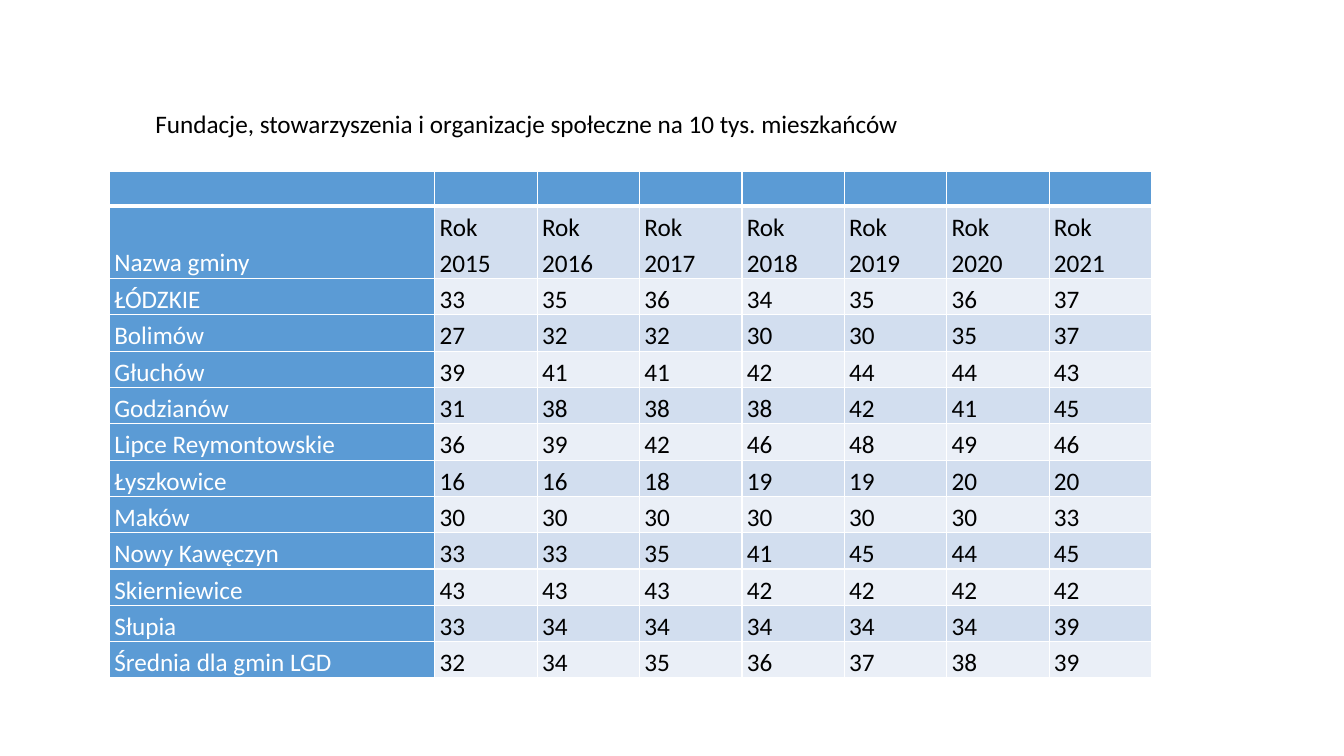
from dataclasses import dataclass

from lxml.etree import SubElement
from pptx import Presentation
from pptx.dml.color import RGBColor
from pptx.enum.text import MSO_ANCHOR, MSO_AUTO_SIZE, PP_ALIGN
from pptx.oxml.ns import qn
from pptx.util import Cm, Pt

BLUE, WHITE, BLACK = "5B9BD5", "FFFFFF", "000000"
BANDS = ("D2DEEF", "EAEFF7")
YEARS = range(2015, 2022)
CELL = {"margin_left": Cm(0.12), "margin_right": Cm(0.12), "margin_top": 0,
        "margin_bottom": 0, "vertical_anchor": MSO_ANCHOR.BOTTOM}
PARA = {"alignment": PP_ALIGN.JUSTIFY, "line_spacing": 1.2,
        "space_before": Pt(6), "space_after": Pt(6)}
FONT = {"name": "Calibri", "size": Pt(18), "bold": False}
TITLE = {"left": Cm(3.66), "top": Cm(2.59), "width": Cm(20.07), "height": Cm(1.02)}
FRAME = {"word_wrap": True, "vertical_anchor": MSO_ANCHOR.TOP,
         "auto_size": MSO_AUTO_SIZE.SHAPE_TO_FIT_TEXT}


@dataclass
class Row:
    """One table row: its label, values, body fill and height."""
    label: str
    values: list
    fill: str
    high: float = 0.86
    base: int = 1


DATA = {
    "ŁÓDZKIE": (33, 35, 36, 34, 35, 36, 37),
    "Bolimów": (27, 32, 32, 30, 30, 35, 37),
    "Głuchów": (39, 41, 41, 42, 44, 44, 43),
    "Godzianów": (31, 38, 38, 38, 42, 41, 45),
    "Lipce Reymontowskie": (36, 39, 42, 46, 48, 49, 46),
    "Łyszkowice": (16, 16, 18, 19, 19, 20, 20),
    "Maków": (30, 30, 30, 30, 30, 30, 33),
    "Nowy Kawęczyn": (33, 33, 35, 41, 45, 44, 45),
    "Skierniewice": (43, 43, 43, 42, 42, 42, 42),
    "Słupia": (33, 34, 34, 34, 34, 34, 39),
    "Średnia dla gmin LGD": (32, 34, 35, 36, 37, 38, 39),
}


def apply(item, style: dict) -> None:
    """Set each attribute named in the style."""
    for name, value in style.items():
        setattr(item, name, value)


def tint(code: str) -> RGBColor:
    """Turn a hex string into a colour."""
    return RGBColor.from_string(code)


def write(para, text: str, code: str) -> None:
    """Add text in the slide's font, if there is any."""
    if text:
        run = para.add_run()
        run.text = text
        apply(run.font, FONT)
        run.font.color.rgb = tint(code)


def edge(cell, base: int) -> None:
    """Draw white cell borders with the given bottom width in points."""
    props = cell._tc.get_or_add_tcPr()
    for side, wide in (("L", 1), ("R", 1), ("T", 1), ("B", base)):
        line = SubElement(props, qn(f"a:ln{side}"), w=str(Pt(wide)))
        fill = SubElement(line, qn("a:solidFill"))
        SubElement(fill, qn("a:srgbClr"), val=WHITE)


def draw(cell, text: str, fill: str, code: str, base: int) -> None:
    """Format and fill one cell."""
    apply(cell, CELL)
    edge(cell, base)
    cell.fill.solid()
    cell.fill.fore_color.rgb = tint(fill)
    para = cell.text_frame.paragraphs[0]
    apply(para, PARA)
    write(para, text, code)


def head(slide) -> None:
    """Place and format the title."""
    title = slide.shapes.title
    apply(title, TITLE)
    apply(title.text_frame, FRAME)
    para = title.text_frame.paragraphs[0]
    para.alignment = PP_ALIGN.LEFT
    write(para, "Fundacje, stowarzyszenia i organizacje społeczne na 10 tys. mieszkańców", BLACK)


def grid(slide, rows: list[Row]) -> None:
    """Build the table from its rows."""
    wide = [8.2] + [2.58] * len(YEARS)
    table = slide.shapes.add_table(
        len(rows), len(wide), Cm(2.76), Cm(4.33), Cm(sum(wide)),
        Cm(sum(row.high for row in rows))).table
    for col, size in zip(table.columns, wide):
        col.width = Cm(size)
    for line, row in zip(table.rows, rows):
        line.height = Cm(row.high)
        for pos, (cell, text) in enumerate(zip(line.cells, [row.label, *row.values])):
            fill, code = (row.fill, BLACK) if pos else (BLUE, WHITE)
            draw(cell, str(text), fill, code, row.base)


def main() -> None:
    """Build and save the slide."""
    deck = Presentation()
    apply(deck, {"slide_width": Cm(33.87), "slide_height": Cm(19.05)})
    slide = deck.slides.add_slide(deck.slide_layouts[5])
    head(slide)
    rows = [Row("", [""] * len(YEARS), BLUE, base=3),
            Row("Nazwa gminy", [f"Rok {year}" for year in YEARS], BANDS[0], 1.8)]
    rows += [Row(name, list(values), BANDS[num % 2])
             for num, (name, values) in enumerate(DATA.items(), 1)]
    grid(slide, rows)
    deck.save("out.pptx")


if __name__ == "__main__":
    main()
